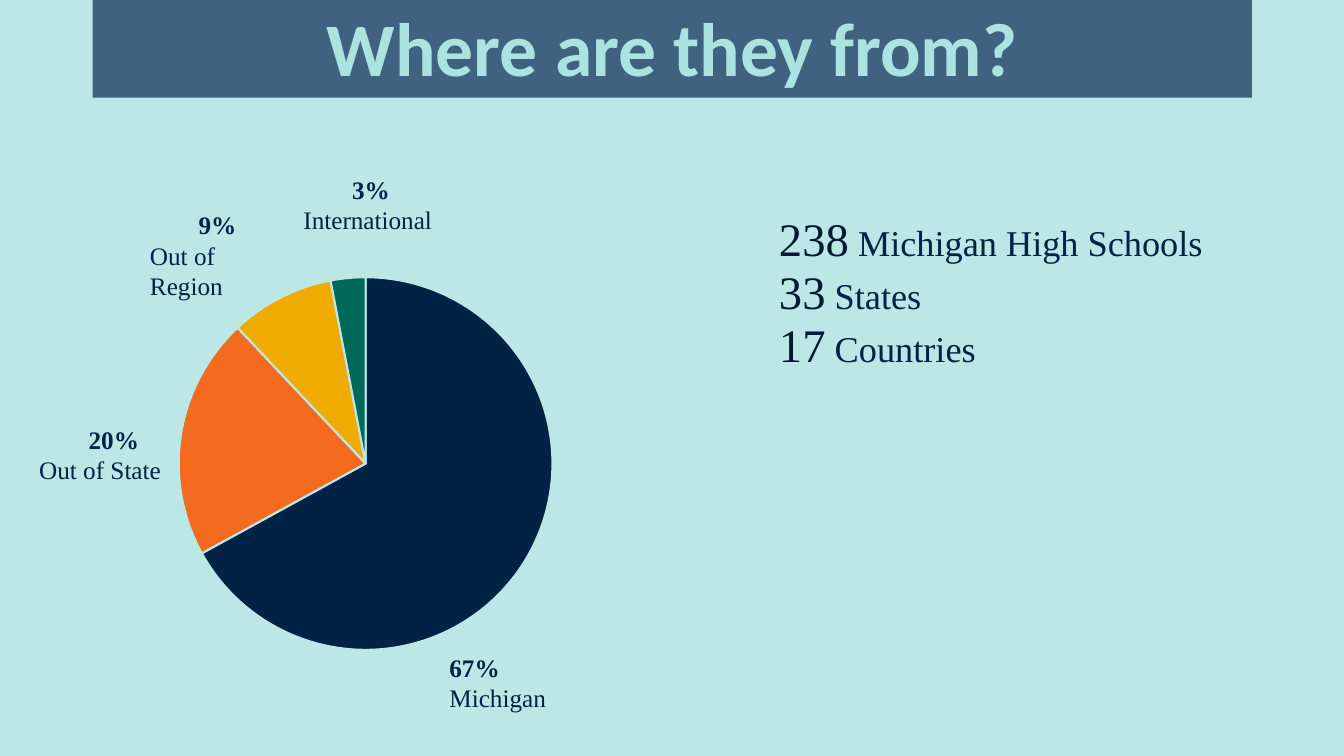
from lxml import etree
from pptx import Presentation
from pptx.chart.data import CategoryChartData
from pptx.dml.color import RGBColor
from pptx.enum.chart import XL_CHART_TYPE as ChartType
from pptx.enum.shapes import MSO_SHAPE as Shape
from pptx.enum.text import MSO_ANCHOR as Anchor, PP_ALIGN as Align
from pptx.oxml import parse_xml
from pptx.oxml.ns import nsdecls
from pptx.util import Inches, Pt

WIDTH, HEIGHT = Inches(13.33), Inches(7.5)
SERIF, SANS = "Times New Roman", "Calibri"
AQUA = RGBColor(0xBB, 0xE7, 0xE6)
PALE = RGBColor(0xAC, 0xE2, 0xE0)
SLATE = RGBColor(0x3F, 0x62, 0x80)
NAVY = RGBColor(0x00, 0x22, 0x44)
INK = RGBColor(0x00, 0x19, 0x33)
ORANGE = RGBColor(0xF4, 0x6A, 0x1F)
GOLD = RGBColor(0xF0, 0xAB, 0x00)
GREEN = RGBColor(0x00, 0x68, 0x5B)

SHARES = [(67, NAVY), (21, ORANGE), (9, GOLD), (3, GREEN)]
COUNTS = [("238", " Michigan High Schools"), ("33", " States"), ("17", " Countries")]
LABELS = [
    (32.7, 85.6, 9.45, "67% ", "Michigan", False, Align.LEFT),
    (2.18, 55.47, 13.05, "20% ", "Out of State", True, Align.CENTER),
    (10.42, 27.07, 12, "9% ", "Out of Region", True, Align.CENTER),
    (20.7, 22.4, 13.8, "3% ", "International ", False, Align.CENTER),
]


def place(x, y, w, h):
    """Turn percentages of the slide into a position and a size."""
    return (round(WIDTH * x / 100), round(HEIGHT * y / 100),
            round(WIDTH * w / 100), round(HEIGHT * h / 100))


def add_run(p, text, size=18, color=NAVY, bold=False, font=SERIF):
    """Append a formatted run to a paragraph."""
    r = p.add_run()
    r.text = text
    r.font.size, r.font.bold, r.font.name = Pt(size), bold, font
    r.font.color.rgb = color


def add_box(s, *area):
    """Add a wrapping text box and return its text frame."""
    tf = s.shapes.add_textbox(*place(*area)).text_frame
    tf.word_wrap = True
    return tf


def add_title(s, text):
    """Add the title banner."""
    sp = s.shapes.add_shape(Shape.RECTANGLE, *place(6.9, 0, 86.25, 12.93))
    sp.shadow.inherit = False
    sp.fill.solid()
    sp.fill.fore_color.rgb = SLATE
    sp.line.fill.background()
    tf = sp.text_frame
    tf.word_wrap, tf.vertical_anchor = True, Anchor.BOTTOM
    p = tf.paragraphs[0]
    p.alignment, p.line_spacing = Align.CENTER, 0.9
    add_run(p, text, size=54, color=PALE, bold=True, font=SANS)


def add_counts(s):
    """List the numbers of schools, states and countries."""
    tf = add_box(s, 57.22, 29.07, 41.55, 21.47)
    for i, (number, noun) in enumerate(COUNTS):
        p = tf.add_paragraph() if i else tf.paragraphs[0]
        p.line_spacing, p.space_before = 0.7, Pt(10 if i else 0)
        add_run(p, number, size=33.3, color=INK)
        add_run(p, noun, size=25.9)


def add_label(s, x, y, w, share, place_name, split, align):
    """Label a slice with its share and its place."""
    tf = add_box(s, x, y, w, 9.47)
    p = tf.paragraphs[0]
    p.alignment = align
    add_run(p, share, bold=True)
    add_run(tf.add_paragraph() if split else p, place_name)


def add_pie(s):
    """Draw the pie of home regions."""
    data = CategoryChartData()
    data.categories = [str(i + 1) for i in range(len(SHARES))]
    data.add_series("Series 1", [value for value, _ in SHARES])
    chart = s.shapes.add_chart(ChartType.PIE, *place(6.9, 36.53, 42.3, 53.73), data).chart
    chart.has_legend = chart.has_title = False
    chart.font.size, chart.font.name = Pt(10), SERIF
    chart.font.color.rgb = NAVY
    plot = chart.plots[0]
    plot.vary_by_categories = True
    for i, (_, color) in enumerate(SHARES):
        fmt = plot.series[0].points[i].format
        fmt.fill.solid()
        fmt.fill.fore_color.rgb = color
        fmt.line.color.rgb = AQUA
        fmt.line.width = Pt(1.5)
    set_plot_area(chart, x=0.15, y=0, w=0.66, h=0.92)


def set_plot_area(chart, **sizes):
    """Fix the inner plot area as shares of the chart."""
    area = chart.element.find(".//{*}plotArea")
    for old in area.findall("{*}layout"):
        area.remove(old)
    layout = parse_xml(f'<c:layout {nsdecls("c")}><c:manualLayout>'
                       '<c:layoutTarget val="inner"/><c:xMode val="edge"/>'
                       '<c:yMode val="edge"/></c:manualLayout></c:layout>')
    for key, value in sizes.items():
        tag = etree.QName(layout).namespace
        etree.SubElement(layout[0], f"{{{tag}}}{key}").set("val", str(value))
    area.insert(0, layout)


def main():
    """Build and save the slide."""
    prs = Presentation()
    prs.slide_width, prs.slide_height = WIDTH, HEIGHT
    s = prs.slides.add_slide(prs.slide_layouts[6])
    s.background.fill.solid()
    s.background.fill.fore_color.rgb = AQUA
    add_title(s, "Where are they from?")
    add_counts(s)
    for label in LABELS:
        add_label(s, *label)
    add_pie(s)
    prs.save("out.pptx")


if __name__ == "__main__":
    main()
